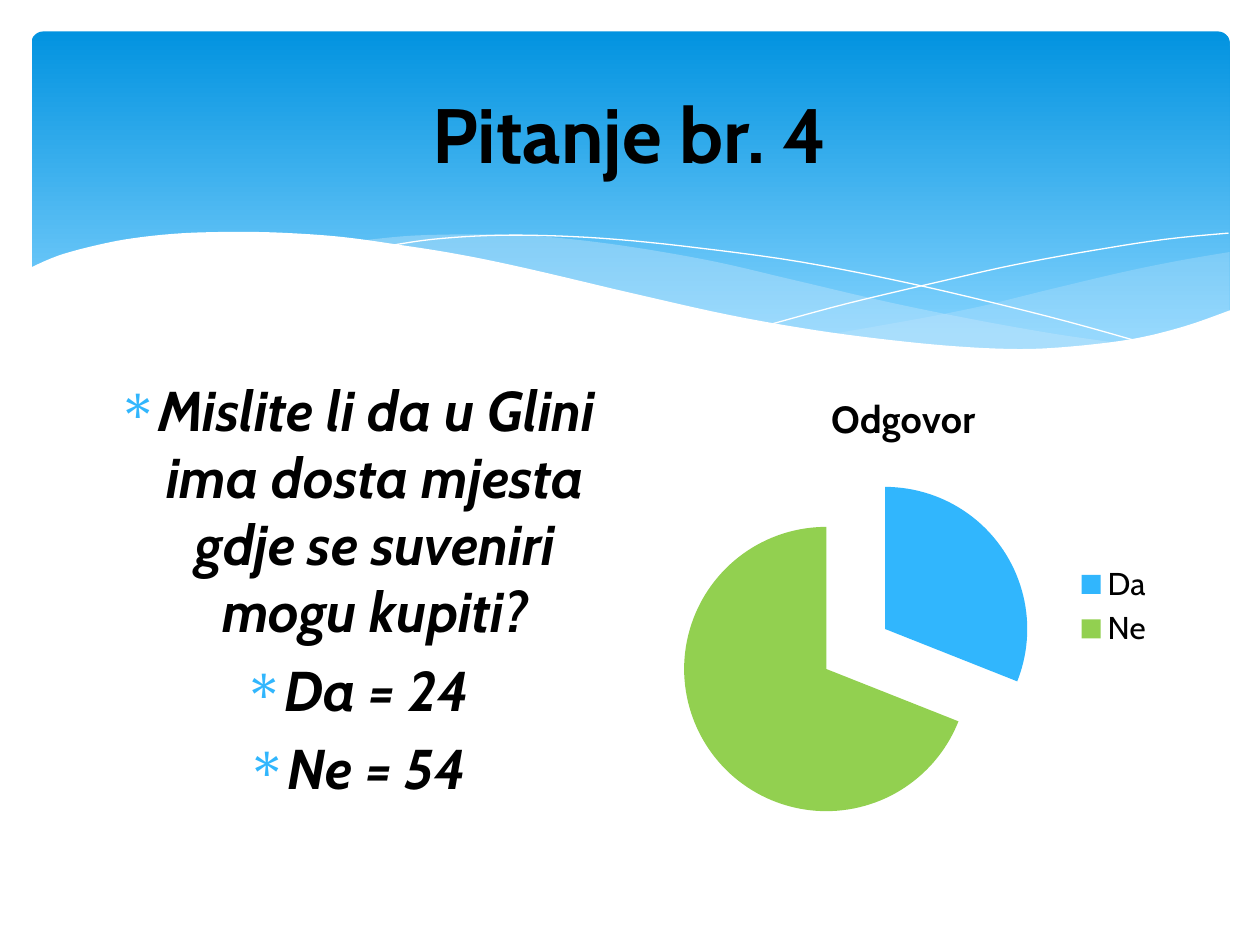
from lxml import etree
from pptx import Presentation
from pptx.chart.data import CategoryChartData
from pptx.dml.color import RGBColor
from pptx.enum.chart import XL_CHART_TYPE, XL_LEGEND_POSITION
from pptx.enum.shapes import MSO_SHAPE
from pptx.enum.text import MSO_ANCHOR, PP_ALIGN
from pptx.oxml.ns import qn
from pptx.util import Inches, Pt

PIE = XL_CHART_TYPE.PIE
RIGHT = XL_LEGEND_POSITION.RIGHT
ROUNDED = MSO_SHAPE.ROUNDED_RECTANGLE
TOP, MIDDLE = MSO_ANCHOR.TOP, MSO_ANCHOR.MIDDLE
CENTER = PP_ALIGN.CENTER

FONT, BULLET_FONT = "Cabin", "Symbol"
BLACK, WHITE, MIST = "000000", "FFFFFF", "C6E7FC"
BLUE, GREEN = "31B6FD", "92D050"

BAND_RIGHT = [
    [(9.76, 2), (9.35, 2.07), (8.91, 2.16), (8.32, 2.3), (7.79, 2.43), (7.29, 2.53), (6.61, 2.65)],
    [(6.61, 2.65), (7.05, 2.71), (7.57, 2.76), (8.03, 2.78), (8.54, 2.76), (8.97, 2.7),
     (9.35, 2.62), (9.76, 2.47)],
]
BAND_LEFT = [
    [(8.93, 2.73), (8.37, 2.65), (7.75, 2.54), (7.06, 2.4), (6.29, 2.22), (5.69, 2.08),
     (5.14, 1.98), (4.64, 1.91), (4.2, 1.87), (3.8, 1.86), (3.28, 1.87), (2.86, 1.91)],
    [(2.86, 1.91), (3.42, 1.99), (4.04, 2.11), (4.49, 2.22), (5.3, 2.4), (6.01, 2.55),
     (6.65, 2.66), (7.22, 2.74), (7.73, 2.78), (8.18, 2.79), (8.57, 2.77), (8.93, 2.73)],
]
THREAD_LEFT = [(3.09, 1.95), (3.43, 1.9), (3.87, 1.87), (4.33, 1.87), (4.89, 1.9), (5.56, 1.97),
               (6.36, 2.08), (7.27, 2.26), (8.31, 2.51), (9.07, 2.72)]
THREAD_RIGHT = [(6.13, 2.57), (6.72, 2.41), (7.48, 2.23), (8.06, 2.1), (8.66, 1.99),
                (9.24, 1.9), (9.75, 1.85)]
WAVE = [(9.77, 2.46), (9.4, 2.59), (8.99, 2.69), (8.5, 2.75), (8.09, 2.77), (7.61, 2.75),
        (7.08, 2.7), (6.47, 2.62), (5.79, 2.5), (5.03, 2.33), (4.18, 2.13), (3.65, 2.02),
        (3.15, 1.94), (2.71, 1.88), (2.3, 1.85), (1.93, 1.84), (1.46, 1.85), (1.06, 1.89),
        (0.75, 1.95), (0.46, 2.03), (0.23, 2.13)]


def rgb(value):
    """Turn a hex string into a colour."""
    return RGBColor.from_string(value)


def smooth(knots, steps=5):
    """Return points on a Catmull-Rom curve through the knots."""
    padded = [knots[0], *knots, knots[-1]]
    points = [knots[0]]
    for a, b, c, d in zip(padded, padded[1:], padded[2:], padded[3:]):
        for i in range(1, steps + 1):
            t = i / steps
            points.append(tuple(
                0.5 * (2 * q + (r - p) * t + (2 * p - 5 * q + 4 * r - s) * t ** 2
                       + (3 * q - p - 3 * r + s) * t ** 3)
                for p, q, r, s in zip(a, b, c, d)))
    return points


def write(p, text, size, color=BLACK, bold=False, italic=False):
    """Add one formatted run to a paragraph."""
    r = p.add_run()
    r.text = text
    r.font.name, r.font.size = FONT, Pt(size)
    r.font.bold, r.font.italic = bold, italic
    r.font.color.rgb = rgb(color)


class Deck:
    """Holds the slide and draws its elements in one style."""

    def __init__(self, prs):
        self.s = prs.slides.add_slide(prs.slide_layouts[6])

    def banner(self, x, y, w, h, stops, adj):
        """Draw a rounded panel with a downward gradient."""
        sp = self.s.shapes.add_shape(ROUNDED, Inches(x), Inches(y), Inches(w), Inches(h))
        sp.adjustments[0] = adj
        sp.shadow.inherit = False
        sp.line.fill.background()
        sp.fill.gradient()
        sp.fill.gradient_angle = 270
        for stop, (position, color) in zip(sp.fill.gradient_stops, stops):
            stop.position = position
            stop.color.rgb = rgb(color)

    def outline(self, points, closed):
        """Draw a bare freeform through the points."""
        corners = [(Inches(x), Inches(y)) for x, y in points]
        fb = self.s.shapes.build_freeform(*corners[0])
        fb.add_line_segments(corners[1:], close=closed)
        sp = fb.convert_to_shape()
        sp.shadow.inherit = False
        return sp

    def area(self, points, color, alpha=100):
        """Draw a filled freeform with an opacity in percent."""
        sp = self.outline(points, True)
        sp.line.fill.background()
        sp.fill.solid()
        sp.fill.fore_color.rgb = rgb(color)
        if alpha < 100:
            clr = sp.fill._xPr.find(".//" + qn("a:srgbClr"))
            etree.SubElement(clr, qn("a:alpha"), val=str(alpha * 1000))

    def thread(self, points, color):
        """Draw an open hairline curve."""
        sp = self.outline(points, False)
        sp.fill.background()
        sp.line.color.rgb = rgb(color)
        sp.line.width = Pt(0)

    def text(self, x, y, w, h, lines, size, anchor=TOP, italic=False, bullet=None):
        """Add centred bold paragraphs, with a bullet sign if given."""
        tf = self.s.shapes.add_textbox(Inches(x), Inches(y), Inches(w), Inches(h)).text_frame
        tf.word_wrap = True
        tf.vertical_anchor = anchor
        for i, line in enumerate(lines):
            p = tf.add_paragraph() if i else tf.paragraphs[0]
            p.alignment = CENTER
            write(p, line, size, bold=True, italic=italic)
            if bullet:
                p.space_before = Pt(size * 0.2)
                pPr = p._p.get_or_add_pPr()
                pPr.set("marL", str(Inches(0.3)))
                pPr.set("indent", str(-Inches(0.3)))
                clr = etree.SubElement(pPr, qn("a:buClr"))
                etree.SubElement(clr, qn("a:srgbClr"), val=BLUE)
                etree.SubElement(pPr, qn("a:buFont"), typeface=BULLET_FONT)
                etree.SubElement(pPr, qn("a:buChar"), char=bullet)

    def pie(self, x, y, w, h, title, values, colors, explosion):
        """Add an exploded pie chart with a title and a legend."""
        data = CategoryChartData()
        data.categories = list(values)
        data.add_series(title, list(values.values()))
        chart = self.s.shapes.add_chart(
            PIE, Inches(x), Inches(y), Inches(w), Inches(h), data).chart
        chart.font.name, chart.font.size = FONT, Pt(18)
        chart.font.color.rgb = rgb(BLACK)
        chart.has_title = True
        write(chart.chart_title.text_frame.paragraphs[0], title, 21.6, bold=True)
        chart.has_legend = True
        chart.legend.position = RIGHT
        chart.legend.include_in_layout = False
        plot = chart.plots[0]
        plot.vary_by_categories = True
        series = plot.series[0]
        tag = etree.Element(qn("c:explosion"), val=str(explosion))
        series._element.find(qn("c:tx")).addnext(tag)
        for i, color in enumerate(colors):
            fill = series.points[i].format.fill
            fill.solid()
            fill.fore_color.rgb = rgb(color)


def main():
    """Build the slide and save it."""
    prs = Presentation()
    prs.slide_width, prs.slide_height = Inches(10), Inches(7.5)
    deck = Deck(prs)
    deck.banner(0.25, 0.25, 9.51, 2.7, [(0, "0293E0"), (0.9, "83D3FE")], 0.034)
    for band, alpha in ((BAND_RIGHT, 29), (BAND_LEFT, 40)):
        deck.area([point for edge in band for point in smooth(edge)], MIST, alpha)
    for knots in (THREAD_LEFT, THREAD_RIGHT):
        deck.thread(smooth(knots), WHITE)
    deck.area(smooth(WAVE) + [(0.23, 3.29), (9.77, 3.29)], WHITE)
    deck.text(0.5, 0.37, 9, 1.37, ["Pitanje br. 4"], 44, anchor=MIDDLE)
    question = "Mislite li da u Glini ima dosta mjesta gdje se suveniri mogu kupiti?"
    deck.text(0.74, 2.93, 4.18, 3.77, [question, "Da = 24", "Ne = 54"], 32,
              italic=True, bullet="∗")
    deck.pie(5.08, 2.93, 4.18, 3.77, "Odgovor", {"Da": 31, "Ne": 69}, [BLUE, GREEN], 25)
    prs.save("out.pptx")


if __name__ == "__main__":
    main()
